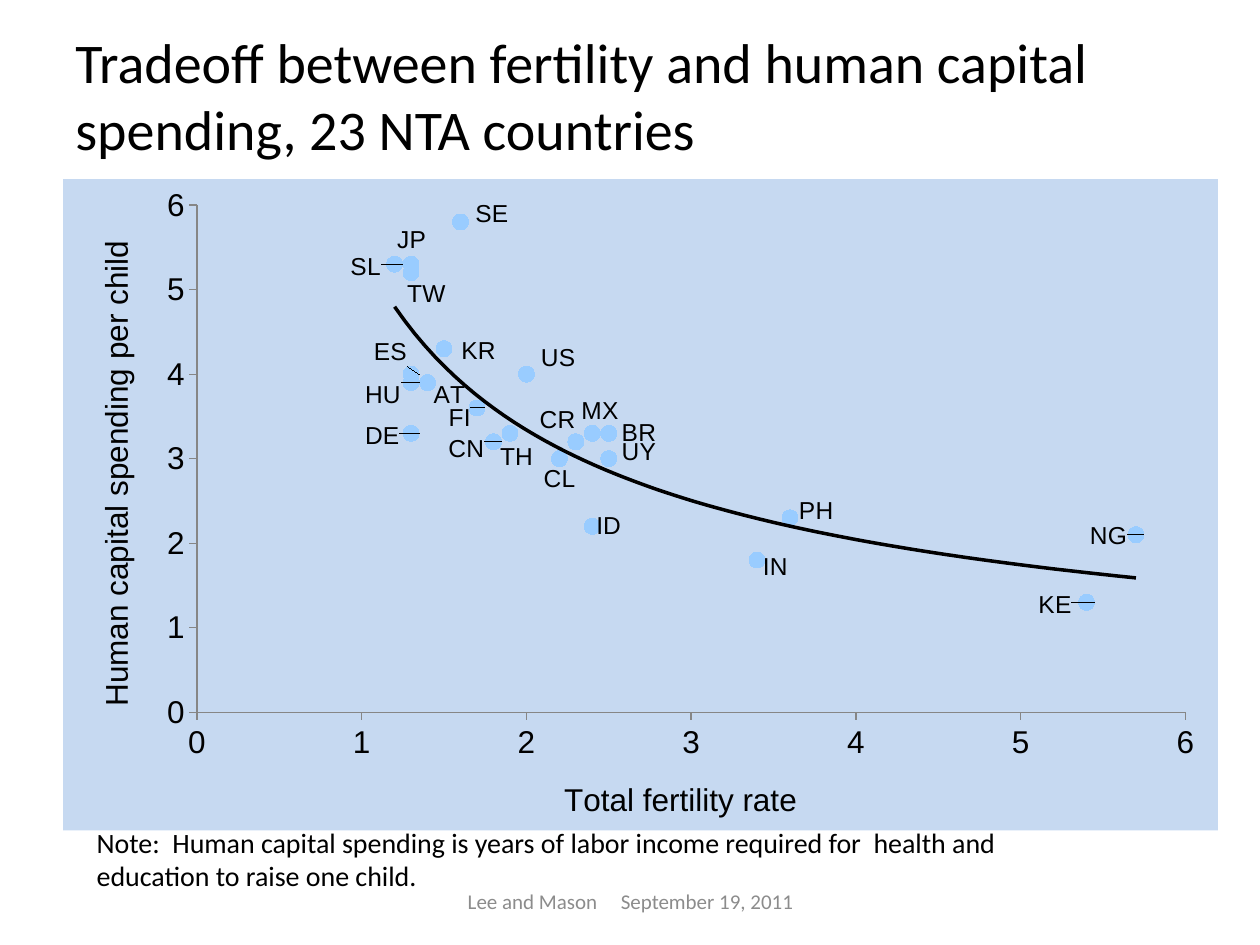
from lxml.etree import SubElement as Sub
from pptx import Presentation
from pptx.chart.data import XyChartData as XyData
from pptx.dml.color import RGBColor as RGB
from pptx.enum.chart import XL_CHART_TYPE as Kind
from pptx.enum.chart import XL_LABEL_POSITION as Pos
from pptx.enum.chart import XL_MARKER_STYLE as Mark
from pptx.enum.chart import XL_TICK_MARK as Tick
from pptx.enum.text import MSO_ANCHOR as Anchor
from pptx.enum.text import PP_ALIGN as Align
from pptx.oxml import parse_xml
from pptx.oxml.ns import qn
from pptx.util import Cm, Pt

HUES = {"ink": "000000", "sky": "C6D9F1", "dot": "99CCFF",
        "axis": "868686", "grey": "8C8C8C"}
NS = ('xmlns:c="http://schemas.openxmlformats.org/drawingml/2006/chart" '
      'xmlns:a="http://schemas.openxmlformats.org/drawingml/2006/main"')

# code, fertility, spending, label shift right and down in cm
LANDS = [
    ("KE", 5.4, 1.3, -1.23, 0.06), ("NG", 5.7, 2.1, -1.19, 0.02),
    ("IN", 3.4, 1.8, -0.14, 0.14), ("ID", 2.4, 2.2, -0.18, 0),
    ("JP", 1.3, 5.3, -0.54, -0.48), ("PH", 3.6, 2.3, -0.08, -0.14),
    ("KR", 1.5, 4.3, 0.09, 0.04), ("TW", 1.3, 5.2, -0.34, 0.44),
    ("TH", 1.9, 3.3, -0.46, 0.48), ("BR", 2.5, 3, 0, -0.52),
    ("CL", 2.2, 3, -0.58, 0.4), ("CR", 2.3, 3.2, -0.99, -0.44),
    ("MX", 2.4, 3.3, -0.48, -0.46), ("UY", 2.5, 3.3, 0, 0.38),
    ("AT", 1.4, 3.9, -0.14, 0.26), ("FI", 1.7, 3.6, -0.83, 0.2),
    ("DE", 1.3, 3.3, -1.19, 0.06), ("HU", 1.3, 3.9, -1.19, 0.26),
    ("SL", 1.2, 5.3, -1.15, 0.06), ("ES", 1.3, 4, -1.01, -0.44),
    ("SE", 1.6, 5.8, 0.04, -0.16), ("US", 2, 4, 0.03, -0.32),
    ("CN", 1.8, 3.2, -1.17, 0.14),
]


def style(font, size, name, hue="ink"):
    form = {"size": Pt(size), "name": name, "bold": False}
    for key, val in form.items():
        setattr(font, key, val)
    font.color.rgb = RGB.from_string(HUES[hue])


def add_text(slide, box, text, size, hue="ink", align=Align.LEFT,
             anchor=Anchor.TOP):
    frame = slide.shapes.add_textbox(*map(Cm, box)).text_frame
    form = {"word_wrap": True, "vertical_anchor": anchor}
    for key, val in form.items():
        setattr(frame, key, val)
    para = frame.paragraphs[0]
    para.text = text
    para.alignment = align
    style(para.runs[0].font, size, "Calibri", hue)


def layout(**parts):
    node = parse_xml(f"<c:layout {NS}><c:manualLayout/></c:layout>")
    for key, val in parts.items():
        Sub(node[0], qn(f"c:{key}")).set("val", str(val))
    return node


def paint(hue):
    return parse_xml(
        f'<c:spPr {NS}><a:solidFill><a:srgbClr val="{HUES[hue]}"/>'
        '</a:solidFill><a:ln><a:noFill/></a:ln></c:spPr>')


def set_axis(axis, title):
    form = {"minimum_scale": 0, "maximum_scale": 6, "major_unit": 1,
            "has_major_gridlines": False, "major_tick_mark": Tick.OUTSIDE,
            "minor_tick_mark": Tick.NONE}
    for key, val in form.items():
        setattr(axis, key, val)
    axis.tick_labels.number_format = "General"
    axis.tick_labels.number_format_is_linked = False
    style(axis.tick_labels.font, 18, "Arial")
    axis.format.line.width = Pt(0.75)
    axis.format.line.color.rgb = RGB.from_string(HUES["axis"])
    frame = axis.axis_title.text_frame
    frame.text = title
    style(frame.paragraphs[0].runs[0].font, 18, "Arial")


def add_labels(row, wide, high):
    for i, (code, *_) in enumerate(LANDS):
        label = row.points[i].data_label
        label.text_frame.text = code
        label.position = Pos.RIGHT
        style(label.text_frame.paragraphs[0].runs[0].font, 14, "Arial")
    tags = row._element.iter(qn("c:dLbl"))
    for tag, (*_, right, down) in zip(tags, LANDS):
        tag.insert(1, layout(x=round(right / wide, 4),
                             y=round(down / high, 4)))


def add_trend(row):
    trend = parse_xml(
        f'<c:trendline {NS}><c:spPr><a:ln w="{Pt(2)}"><a:solidFill>'
        f'<a:srgbClr val="{HUES["ink"]}"/></a:solidFill></a:ln></c:spPr>'
        '<c:trendlineType val="power"/><c:dispRSqr val="0"/>'
        '<c:dispEq val="0"/></c:trendline>')
    row._element.find(qn("c:xVal")).addprevious(trend)


def add_plot(slide, box):
    data = XyData()
    dots = data.add_series("Human capital spending")
    for _, rate, spend, *_ in LANDS:
        dots.add_data_point(rate, spend)
    chart = slide.shapes.add_chart(
        Kind.XY_SCATTER, *map(Cm, box), data).chart
    chart.has_legend = chart.has_title = False
    style(chart.font, 18, "Arial")
    set_axis(chart.category_axis, "Total fertility rate")
    set_axis(chart.value_axis, "Human capital spending per child")
    plot = chart.plots[0]
    plot.vary_by_categories = False
    row = plot.series[0]
    row.format.line.fill.background()
    row.marker.style = Mark.CIRCLE
    row.marker.size = 9
    row.marker.format.fill.solid()
    row.marker.format.fill.fore_color.rgb = RGB.from_string(HUES["dot"])
    row.marker.format.line.fill.background()
    add_labels(row, *box[2:])
    add_trend(row)
    root = chart._chartSpace
    root.find(qn("c:chart")).addnext(paint("sky"))
    area = next(root.iter(qn("c:plotArea")))
    for old in area.findall(qn("c:layout")):
        area.remove(old)
    area.insert(0, layout(layoutTarget="inner", xMode="edge", yMode="edge",
                          x=0.116, y=0.04, w=0.856, h=0.779))
    area.append(paint("sky"))


def main():
    deck = Presentation()
    deck.slide_width, deck.slide_height = Cm(25.4), Cm(19.05)
    slide = deck.slides.add_slide(deck.slide_layouts[6])
    add_text(slide, (1.27, 0.43, 23.06, 3),
             "Tradeoff between fertility and human capital spending, "
             "23 NTA countries", 32)
    add_plot(slide, (1.27, 3.61, 23.28, 13.13))
    add_text(slide, (1.7, 16.51, 20.52, 1.63),
             "Note:  Human capital spending is years of labor income "
             "required for  health and education to raise one child.", 16)
    add_text(slide, (8.69, 17.65, 8.05, 1.02),
             "Lee and Mason     September 19, 2011", 12, "grey",
             Align.CENTER, Anchor.MIDDLE)
    deck.save("out.pptx")


if __name__ == "__main__":
    main()
